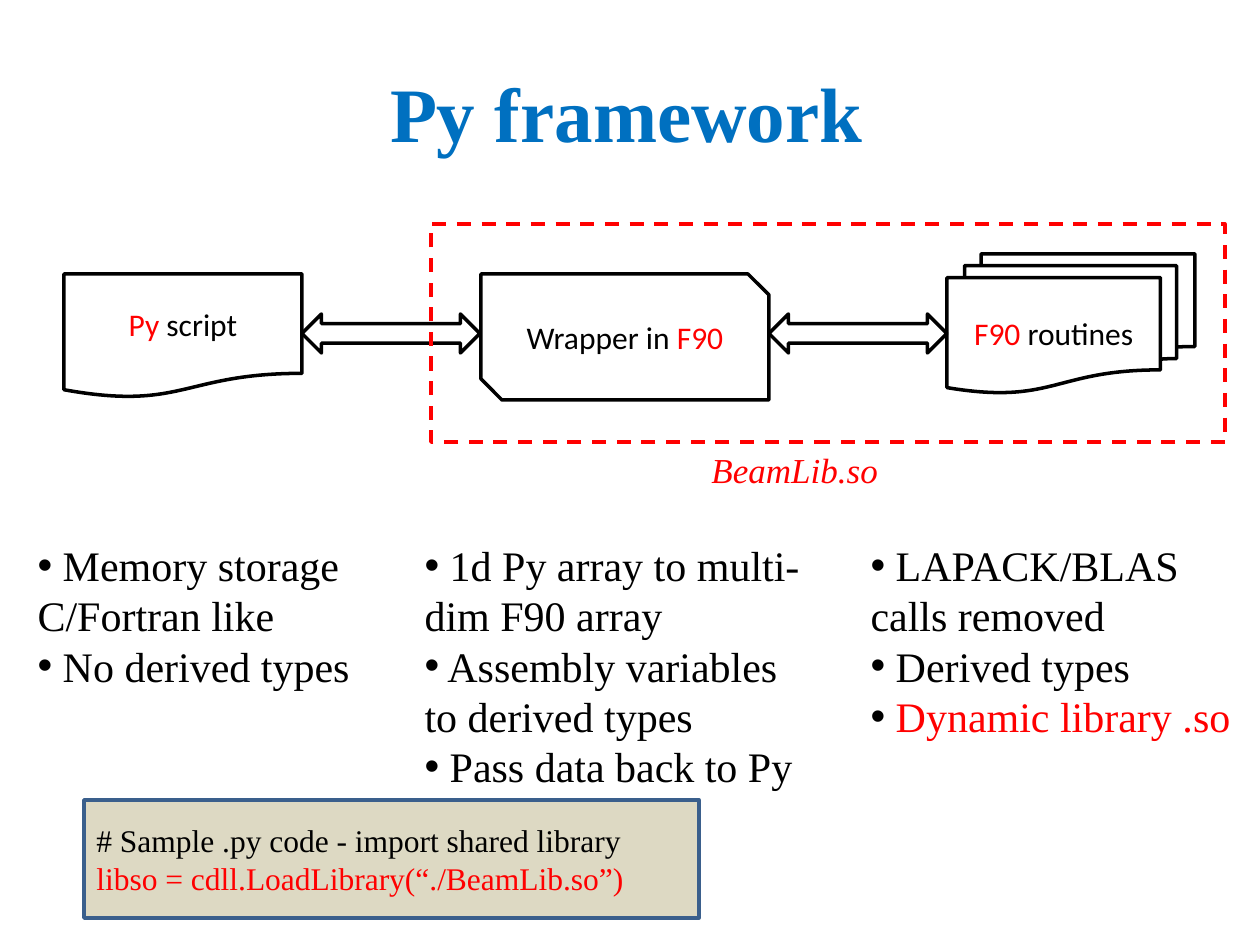
from lxml.etree import SubElement
from pptx import Presentation
from pptx.dml.color import RGBColor
from pptx.enum.dml import MSO_LINE_DASH_STYLE as Dash
from pptx.enum.shapes import MSO_SHAPE as Shape
from pptx.enum.text import MSO_ANCHOR as Anchor, MSO_AUTO_SIZE as AutoSize, PP_ALIGN as Align
from pptx.oxml.ns import qn
from pptx.util import Emu, Pt

PX = 914400 / 126
BLACK = RGBColor(0x00, 0x00, 0x00)
WHITE = RGBColor(0xFF, 0xFF, 0xFF)
RED = RGBColor(0xFF, 0x00, 0x00)
BLUE = RGBColor(0x00, 0x70, 0xC0)
NAVY = RGBColor(0x3A, 0x5F, 0x8C)
SAND = RGBColor(0xDD, 0xD9, 0xC3)
SERIF = "Times New Roman"
SANS = "Calibri"


def px(*lengths):
    return [Emu(round(length * PX)) for length in lengths]


def place(shape, box):
    shape.left, shape.top, shape.width, shape.height = px(*box)


def write(shape, paras, size, font=SERIF, align=Align.LEFT, anchor=Anchor.MIDDLE,
          bold=False, italic=False, bullet=None):
    frame = shape.text_frame
    frame.word_wrap = True
    frame.auto_size = AutoSize.NONE
    frame.vertical_anchor = anchor
    for index, spans in enumerate(paras):
        para = frame.add_paragraph() if index else frame.paragraphs[0]
        para.alignment = align
        para.space_before = Pt(0)
        para.line_spacing = 1.0
        if bullet:
            props = para._p.get_or_add_pPr()
            props.set("marL", "0")
            props.set("indent", "0")
            SubElement(props, qn("a:buFont")).set("typeface", "Arial")
            SubElement(props, qn("a:buChar")).set("char", bullet)
        for text, color in spans:
            span = para.add_run()
            span.text = text
            span.font.name = font
            span.font.size = Pt(size)
            span.font.bold = bold
            span.font.italic = italic
            span.font.color.rgb = color


def add_block(page, kind, box, fill=WHITE, line=BLACK, dash=None):
    block = page.shapes.add_shape(kind, *px(*box))
    block.shadow.inherit = False
    if fill is None:
        block.fill.background()
    else:
        block.fill.solid()
        block.fill.fore_color.rgb = fill
    block.line.color.rgb = line
    block.line.width = Pt(2)
    if dash:
        block.line.dash_style = dash
    return block


def add_diagram(page, box):
    left, top, width, height = box
    library_left = left + 367
    blocks = [
        (Shape.FLOWCHART_DOCUMENT, (left, top + 50, 238, 124), WHITE,
         [("Py", RED), (" script", BLACK)]),
        (Shape.SNIP_2_DIAG_RECTANGLE, (left + 417, top + 50, 288, 126), WHITE,
         [("Wrapper in ", BLACK), ("F90", RED)]),
        (Shape.FLOWCHART_MULTIDOCUMENT, (left + 883, top + 30, 248, 139), None,
         [("F90", RED), (" routines", BLACK)]),
    ]
    for kind, place_box, fill, spans in blocks:
        block = add_block(page, kind, place_box, fill)
        write(block, [spans], 18, font=SANS, align=Align.CENTER)
    for arrow_left in (left + 238, left + 705):
        add_block(page, Shape.LEFT_RIGHT_ARROW, (arrow_left, top + 90, 178, 39))
    add_block(page, Shape.RECTANGLE, (library_left, top, width - 367, height),
              fill=None, line=RED, dash=Dash.DASH)
    label = page.shapes.add_textbox(*px(library_left + 268, top + height, 248, 55))
    write(label, [[("BeamLib.so", RED)]], 20, anchor=Anchor.TOP, italic=True)


def add_list(holder, box, items):
    place(holder, box)
    write(holder, items, 24, anchor=Anchor.TOP, bullet="•")


def add_code(page, box):
    panel = add_block(page, Shape.RECTANGLE, box, fill=SAND, line=NAVY)
    write(panel, [[("# Sample .py code - import shared library", BLACK)],
                  [("libso = cdll.LoadLibrary(“./BeamLib.so”)", RED)]], 18)


def main():
    deck = Presentation()
    deck.slide_width, deck.slide_height = px(1260, 945)
    page = deck.slides.add_slide(deck.slide_layouts.get_by_name("Comparison"))
    title, *holders = page.placeholders
    place(title, (33, 54, 1187, 116))
    write(title, [[("Py framework", BLUE)]], 44, align=Align.CENTER, bold=True)
    add_diagram(page, (64, 224, 1161, 218))
    columns = [
        ((25, 533, 397, 165), [[(" Memory storage C/Fortran like", BLACK)],
                               [(" No derived types", BLACK)]]),
        ((412, 533, 407, 267), [[(" 1d Py array to multi-dim F90 array", BLACK)],
                                [(" Assembly variables to derived types", BLACK)],
                                [(" Pass data back to Py", BLACK)]]),
        ((858, 533, 397, 217), [[(" LAPACK/BLAS calls removed", BLACK)],
                                [(" Derived types", BLACK)],
                                [(" ", BLACK), ("Dynamic library .so", RED)]]),
    ]
    for holder, (box, items) in zip(holders, columns):
        add_list(holder, box, items)
    for spare in holders[len(columns):]:
        spare.element.getparent().remove(spare.element)
    add_code(page, (84, 800, 615, 118))
    deck.save("out.pptx")


if __name__ == "__main__":
    main()
